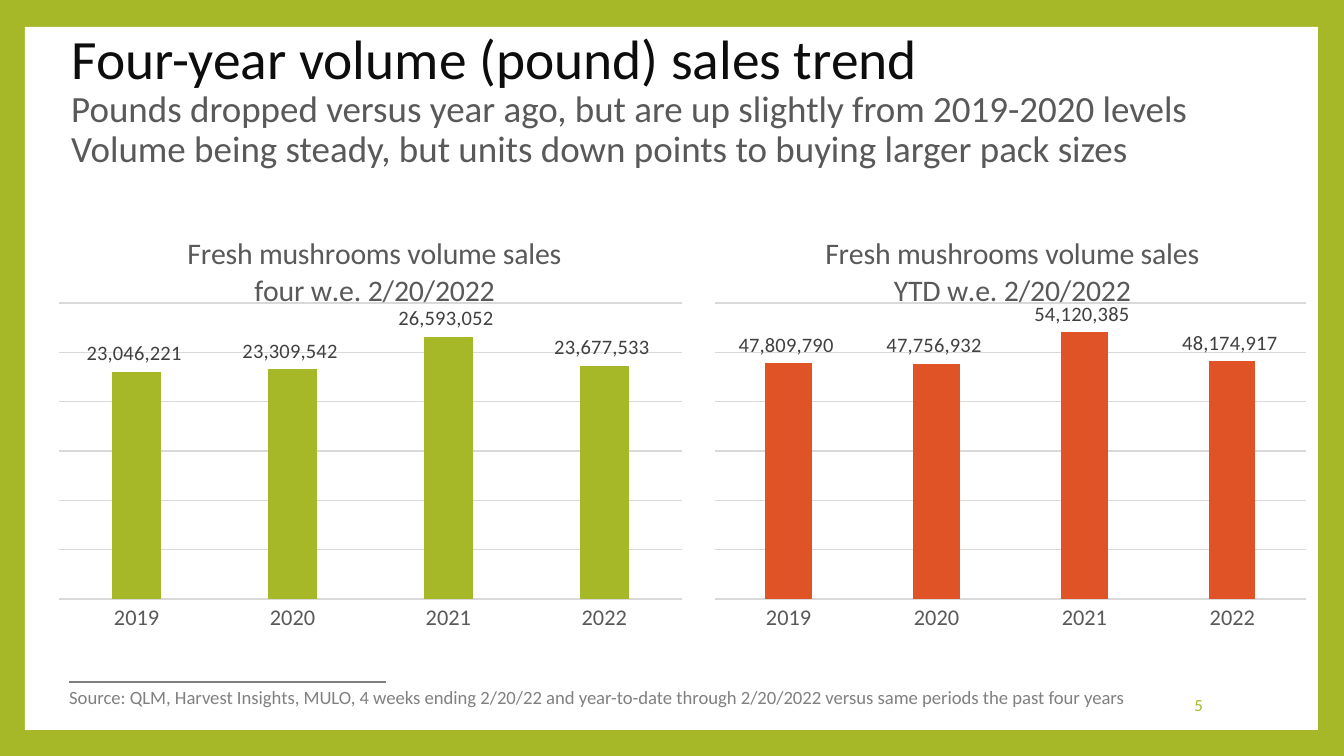
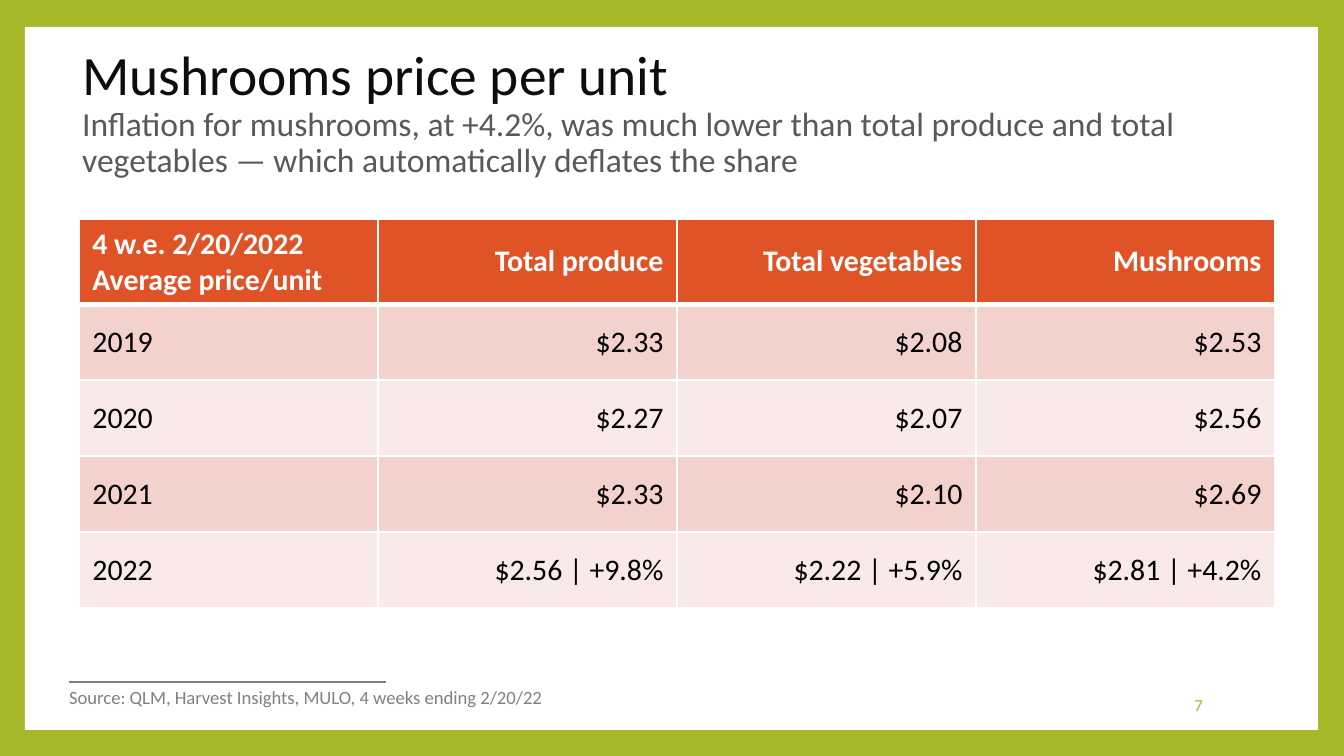
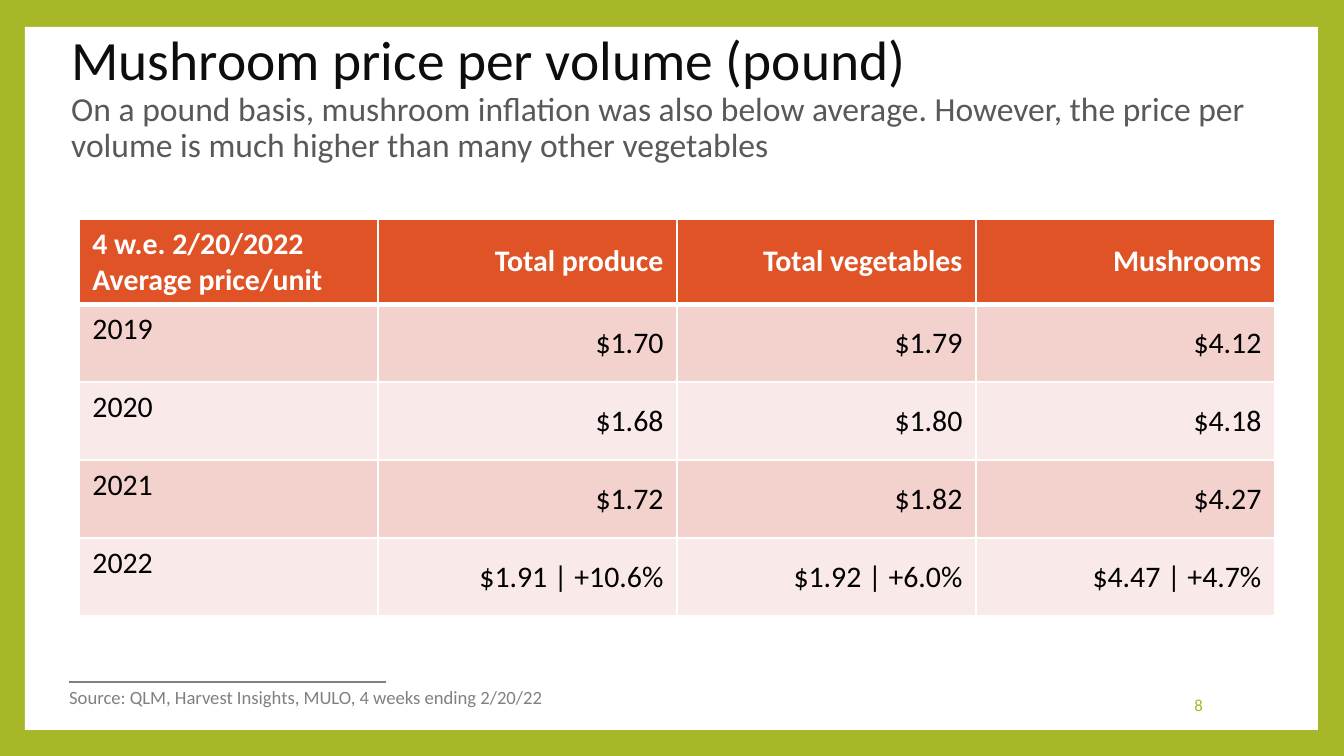
from lxml import etree
from pptx import Presentation
from pptx import util as u
from pptx.chart.data import CategoryChartData
from pptx.dml.color import RGBColor
from pptx.enum import chart as ch, shapes, text as tx
from pptx.oxml.ns import qn

GREEN = RGBColor(0xA6, 0xB7, 0x27)
ORANGE = RGBColor(0xDF, 0x53, 0x27)
ROSE = RGBColor(0xF3, 0xD1, 0xCD)
BLUSH = RGBColor(0xF9, 0xE9, 0xE8)
WHITE = RGBColor(0xFF, 0xFF, 0xFF)
BLACK = RGBColor(0, 0, 0)
INK = RGBColor(0x0D, 0x0D, 0x0D)
DARK = RGBColor(0x40, 0x40, 0x40)
SLATE = RGBColor(0x59, 0x59, 0x59)
GREY = RGBColor(0x80, 0x80, 0x80)
PALE = RGBColor(0xD9, 0xD9, 0xD9)

FONT = "Calibri"
NUMBER = r"#,##0_);[Red]\(#,##0\)"
WIDE, HIGH = 1344, 756
SCALE = u.Inches(10) / WIDE

SOURCE = "Source: QLM, Harvest Insights, MULO, 4 weeks ending 2/20/22"
YEARS = ["2019", "2020", "2021", "2022"]
HEADS = ["4 w.e. 2/20/2022\nAverage price/unit", "Total produce",
         "Total vegetables", "Mushrooms"]
UNIT = [["$2.33", "$2.08", "$2.53"],
        ["$2.27", "$2.07", "$2.56"],
        ["$2.33", "$2.10", "$2.69"],
        ["$2.56 | +9.8%", "$2.22 | +5.9%", "$2.81 | +4.2%"]]
POUND = [["$1.70", "$1.79", "$4.12"],
         ["$1.68", "$1.80", "$4.18"],
         ["$1.72", "$1.82", "$4.27"],
         ["$1.91 | +10.6%", "$1.92 | +6.0%", "$4.47 | +4.7%"]]


def px(*nums):
    return [u.Emu(round(n * SCALE)) for n in nums]


def style(font, size, color, bold=False):
    font.name, font.size, font.bold = FONT, u.Pt(size), bold
    font.color.rgb = color


def put(frame, words, size=16, color=SLATE, bold=False, align=None, lead=None):
    """Add text: a newline starts a paragraph, a vertical tab breaks a line."""
    for i, line in enumerate(words.split("\n")):
        par = frame.add_paragraph() if i else frame.paragraphs[0]
        if align is not None:
            par.alignment = align
        if lead:
            par.line_spacing = lead
        for j, part in enumerate(line.split("\v")):
            if j:
                par.add_line_break()
            if part:
                run = par.add_run()
                run.text = part
                style(run.font, size, color, bold)


def place(node, index, **vals):
    """Give a chart part a manual layout, in shares of the chart."""
    for old in node.findall(qn("c:layout")):
        node.remove(old)
    layout = etree.Element(qn("c:layout"))
    manual = etree.SubElement(layout, qn("c:manualLayout"))
    for key, val in vals.items():
        etree.SubElement(manual, qn("c:" + key)).set("val", str(val))
    node.insert(index, layout)


def edge(cell, base):
    """Draw white borders round a cell; base is the lower width in points."""
    props = cell._tc.get_or_add_tcPr()
    for side, width in zip("LRTB", (1, 1, 1, base)):
        line = etree.SubElement(props, qn("a:ln" + side), w=str(u.Pt(width)))
        fill = etree.SubElement(line, qn("a:solidFill"))
        etree.SubElement(fill, qn("a:srgbClr"), val=str(WHITE))


class Deck:
    def __init__(self):
        self.prs = Presentation()
        self.prs.slide_width, self.prs.slide_height = px(WIDE, HIGH)

    def page(self, number, source, width):
        """Start a slide with its frame, footer rule, number and source."""
        self.slide = self.prs.slides.add_slide(self.prs.slide_layouts[6])
        fill = self.slide.background.fill
        fill.solid()
        fill.fore_color.rgb = GREEN
        self.panel(25, 27, 1293, 703)
        self.rule(69, 682, 386, 682)
        frame = self.box(1028, 685, 188, 40, tx.MSO_ANCHOR.MIDDLE)
        put(frame, str(number), 9, GREEN, align=tx.PP_ALIGN.RIGHT)
        frame = self.box(56, 679, width, 36)
        frame.word_wrap = False
        frame.auto_size = tx.MSO_AUTO_SIZE.SHAPE_TO_FIT_TEXT
        put(frame, source, 10, GREY)

    def panel(self, *area):
        kind = shapes.MSO_SHAPE.RECTANGLE
        rect = self.slide.shapes.add_shape(kind, *px(*area))
        rect.shadow.inherit = False
        rect.fill.solid()
        rect.fill.fore_color.rgb = WHITE
        rect.line.fill.background()

    def rule(self, *ends):
        kind = shapes.MSO_CONNECTOR.STRAIGHT
        line = self.slide.shapes.add_connector(kind, *px(*ends))
        line.line.color.rgb = GREY
        line.line.width = u.Pt(0.79)
        etree.SubElement(line._element.spPr, qn("a:effectLst"))

    def box(self, x, y, w, h, anchor=tx.MSO_ANCHOR.TOP):
        frame = self.slide.shapes.add_textbox(*px(x, y, w, h)).text_frame
        frame.word_wrap = True
        frame.vertical_anchor = anchor
        return frame

    def title(self, area, head, sub, size=18):
        frame = self.box(*area, tx.MSO_ANCHOR.MIDDLE)
        put(frame, head + "\v", 29.7, INK, lead=0.9)
        put(frame, sub, size)

    def chart(self, x, w, name, vals, color):
        data = CategoryChartData(number_format=NUMBER)
        data.categories = YEARS
        data.add_series("Series 1", vals)
        kind = ch.XL_CHART_TYPE.COLUMN_CLUSTERED
        chart = self.slide.shapes.add_chart(kind, *px(x, 208, w, 445), data).chart
        style(chart.font, 10, BLACK)
        chart.has_legend = False
        put(chart.chart_title.text_frame, name)
        place(chart.chart_title._element, 1, xMode="edge", yMode="edge",
              x=round((1 - 380 / w) / 2, 2), y=0.05)
        place(chart._chartSpace.chart.plotArea, 0, layoutTarget="inner",
              xMode="edge", yMode="edge", x=0, y=0.214, w=1, h=0.665)

        cats, axis = chart.category_axis, chart.value_axis
        cats.major_tick_mark = ch.XL_TICK_MARK.NONE
        style(cats.tick_labels.font, 12, SLATE)
        axis.minimum_scale = 0
        axis.has_major_gridlines = True
        axis.tick_labels.number_format = NUMBER
        axis.tick_labels.number_format_is_linked = False
        axis.visible = False
        for line in (cats.format.line, axis.major_gridlines.format.line):
            line.color.rgb = PALE
            line.width = u.Pt(0.75)

        plot = chart.plots[0]
        plot.gap_width, plot.overlap = 219, -27
        plot.vary_by_categories = False
        bars = plot.series[0]
        bars.invert_if_negative = False
        bars.format.fill.solid()
        bars.format.fill.fore_color.rgb = color
        labels = bars.data_labels
        labels.show_value = True
        labels.position = ch.XL_LABEL_POSITION.OUTSIDE_END
        labels.number_format = NUMBER
        labels.number_format_is_linked = False
        style(labels.font, 11, DARK)

    def table(self, prices, high, anchor=tx.MSO_ANCHOR.MIDDLE):
        """Draw the price table; anchor is that of the year cells."""
        rows = [HEADS] + [[year] + row for year, row in zip(YEARS, prices)]
        size = len(rows), len(HEADS)
        area = px(79, 219, 299 * size[1], high * size[0])
        table = self.slide.shapes.add_table(*size, *area).table
        table.horz_banding = False
        for r, row in enumerate(rows):
            table.rows[r].height = px(high)[0]
            for c, words in enumerate(row):
                cell = table.cell(r, c)
                edge(cell, 1 if r else 3)
                cell.fill.solid()
                cell.fill.fore_color.rgb = (BLUSH, ROSE)[r % 2] if r else ORANGE
                cell.vertical_anchor = tx.MSO_ANCHOR.MIDDLE if c or not r else anchor
                put(cell.text_frame, words, color=BLACK if r else WHITE, bold=not r,
                    align=tx.PP_ALIGN.RIGHT if c else tx.PP_ALIGN.LEFT)


def main():
    deck = Deck()

    deck.page(5, SOURCE + " and year-to-date through 2/20/2022"
              " versus same periods the past four years", 1091)
    deck.title((58, 48, 1249, 106), "Four-year volume (pound) sales trend",
               "Pounds dropped versus year ago, but are up slightly from 2019-2020 levels\v"
               "Volume being steady, but units down points to buying larger pack sizes", 19.8)
    deck.chart(58, 625, "Fresh mushrooms volume sales\nfour w.e. 2/20/2022",
               [23046221, 23309542, 26593052, 23677533], GREEN)
    deck.chart(714, 593, "Fresh mushrooms volume sales\nYTD w.e. 2/20/2022",
               [47809790, 47756932, 54120385, 48174917], ORANGE)

    deck.page(7, SOURCE, 516)
    deck.title((69, 77, 1267, 73), "Mushrooms price per unit",
               "Inflation for mushrooms, at +4.2%, was much lower than total produce "
               "and total vegetables — which automatically deflates the share")
    deck.table(UNIT, 76)

    deck.page(8, SOURCE, 500)
    deck.title((58, 48, 1267, 102), "Mushroom price per volume (pound)",
               "On a pound basis, mushroom inflation was also below average. However, "
               "the price per volume is much higher than many other vegetables")
    deck.table(POUND, 78, tx.MSO_ANCHOR.TOP)

    deck.prs.save("out.pptx")


if __name__ == "__main__":
    main()
